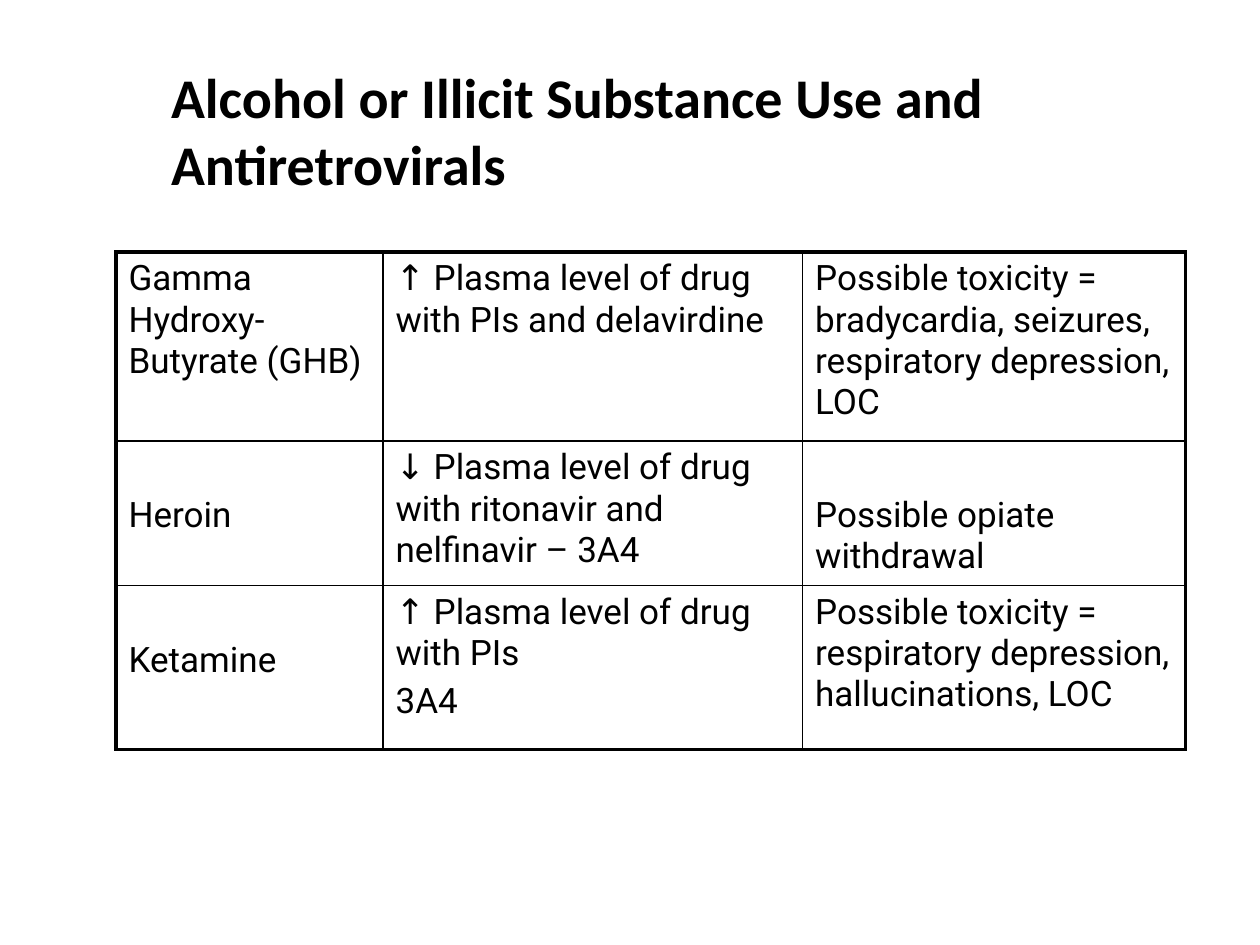
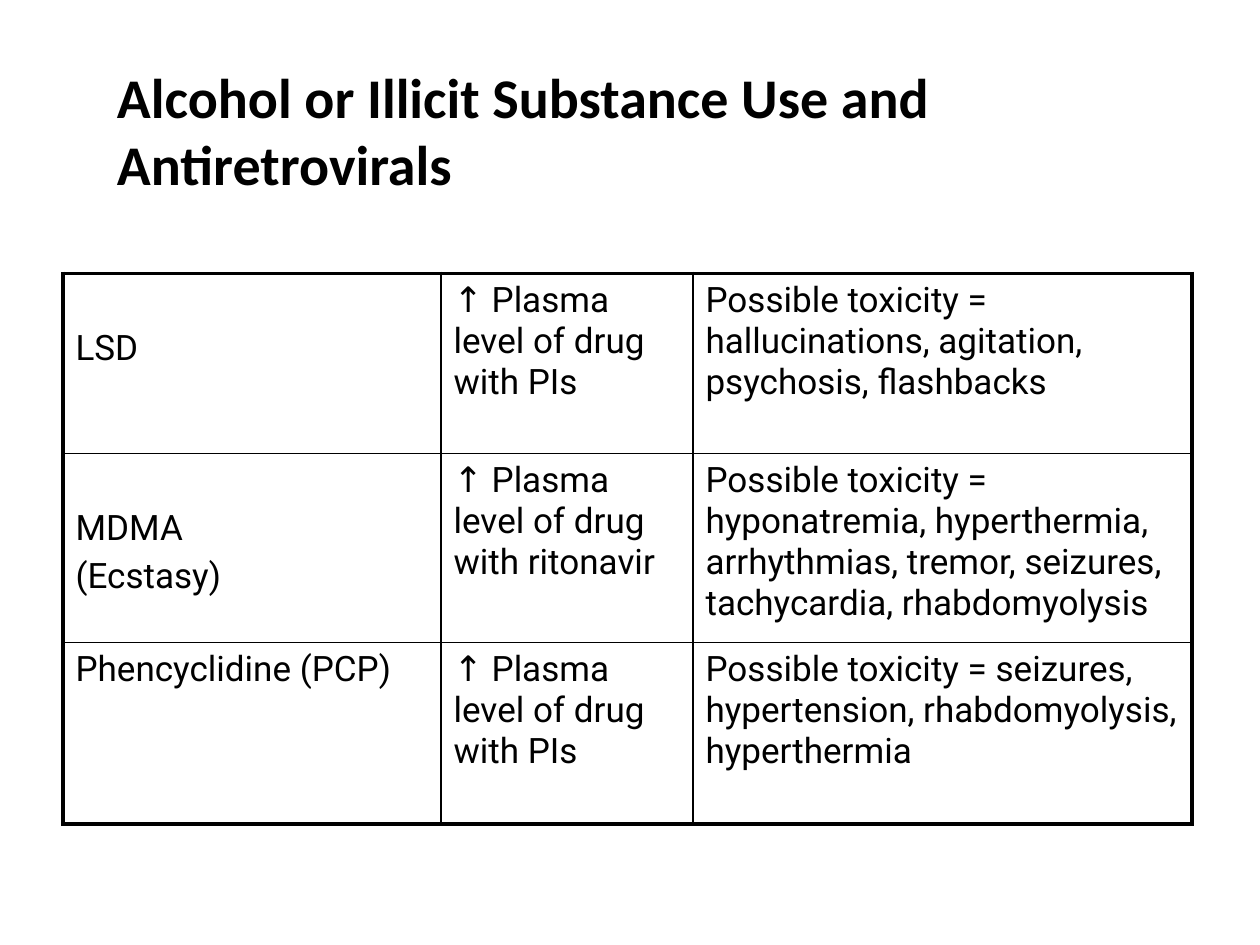
from dataclasses import dataclass

from lxml.etree import SubElement
from pptx import Presentation
from pptx.dml.color import RGBColor
from pptx.enum.text import MSO_ANCHOR as Anchor
from pptx.oxml.ns import qn
from pptx.util import Emu, Pt

PX = 9144  # EMU per px, 100 px to the inch


@dataclass(frozen=True)
class Theme:
    ink: str = "000000"
    title_font: str = "Calibri"
    title_size: int = 32
    body_font: str = "Roboto"
    body_size: int = 20
    para_gap: int = 4
    frame_line: float = 2.25
    inner_line: float = 1
    pad_x: int = 10
    pad_y: int = 5
    lowered_pad: int = 43  # top padding of cells that start one line lower


@dataclass(frozen=True)
class Box:
    x: int
    y: int
    w: int
    h: int


@dataclass(frozen=True)
class Entry:
    text: str
    lowered: bool = False


@dataclass(frozen=True)
class DrugSlide:
    title_box: Box
    left: int
    top: int
    col_widths: tuple[int, ...]
    row_heights: tuple[int, ...]
    rows: tuple[tuple[Entry, ...], ...]


THEME = Theme()
TITLE = "Alcohol or Illicit Substance Use and Antiretrovirals"

SLIDES = (
    DrugSlide(
        Box(126, 23, 807, 160), 92, 200, (212, 333, 304), (150, 113, 130),
        (
            (Entry("Gamma Hydroxy-Butyrate (GHB)"),
             Entry("↑ Plasma level of drug with PIs and delavirdine"),
             Entry("Possible toxicity = bradycardia, seizures, respiratory depression, LOC")),
            (Entry("Heroin", lowered=True),
             Entry("↓ Plasma level of drug with ritonavir and nelfinavir – 3A4"),
             Entry("Possible opiate withdrawal", lowered=True)),
            (Entry("Ketamine", lowered=True),
             Entry("↑ Plasma level of drug with PIs\n3A4"),
             Entry("Possible toxicity = respiratory depression, hallucinations, LOC")),
        ),
    ),
    DrugSlide(
        Box(83, 23, 858, 160), 50, 217, (300, 200, 396), (143, 150, 144),
        (
            (Entry("LSD", lowered=True),
             Entry("↑ Plasma level of drug with PIs"),
             Entry("Possible toxicity = hallucinations, agitation, psychosis, flashbacks")),
            (Entry("MDMA\n(Ecstasy)", lowered=True),
             Entry("↑ Plasma level of drug with ritonavir"),
             Entry("Possible toxicity = hyponatremia, hyperthermia, arrhythmias, "
                   "tremor, seizures, tachycardia, rhabdomyolysis")),
            (Entry("Phencyclidine (PCP)"),
             Entry("↑ Plasma level of drug with PIs"),
             Entry("Possible toxicity = seizures, hypertension, rhabdomyolysis, hyperthermia")),
        ),
    ),
)


def px(n: int) -> Emu:
    return Emu(n * PX)


def write(tf, text: str, *, font: str, size: int, bold: bool = False, gap: int = 0) -> None:
    """Fill a text frame, one paragraph per line of text."""
    tf.word_wrap = True
    for i, line in enumerate(text.split("\n")):
        p = tf.add_paragraph() if i else tf.paragraphs[0]
        if i:
            p.space_before = Pt(gap)
        r = p.add_run()
        r.text = line
        r.font.name, r.font.size, r.font.bold = font, Pt(size), bold
        r.font.color.rgb = RGBColor.from_string(THEME.ink)


def add_title(s, box: Box) -> None:
    sp = s.shapes.add_textbox(px(box.x), px(box.y), px(box.w), px(box.h))
    tf = sp.text_frame
    tf.vertical_anchor = Anchor.MIDDLE
    write(tf, TITLE, font=THEME.title_font, size=THEME.title_size, bold=True)


def add_border(cell, side: str, width: float) -> None:
    ln = SubElement(cell._tc.get_or_add_tcPr(), qn(f"a:ln{side}"), w=str(Pt(width)))
    fill = SubElement(ln, qn("a:solidFill"))
    SubElement(fill, qn("a:srgbClr"), val=THEME.ink)


def add_drug_table(s, spec: DrugSlide) -> None:
    n_rows, n_cols = len(spec.row_heights), len(spec.col_widths)
    frame = s.shapes.add_table(n_rows, n_cols, px(spec.left), px(spec.top),
                               px(sum(spec.col_widths)), px(sum(spec.row_heights)))
    table = frame.table
    table.first_row = table.horz_banding = False
    for col, width in zip(table.columns, spec.col_widths):
        col.width = px(width)
    for row, height in zip(table.rows, spec.row_heights):
        row.height = px(height)

    for i, entries in enumerate(spec.rows):
        for j, entry in enumerate(entries):
            cell = table.cell(i, j)
            cell.margin_left = cell.margin_right = px(THEME.pad_x)
            cell.margin_top = px(THEME.lowered_pad if entry.lowered else THEME.pad_y)
            cell.margin_bottom = px(THEME.pad_y)
            # Heavy lines only on the outer edge of the table
            on_edge = {"L": j == 0, "R": j == n_cols - 1, "T": i == 0, "B": i == n_rows - 1}
            for side, outer in on_edge.items():
                add_border(cell, side, THEME.frame_line if outer else THEME.inner_line)
            cell.fill.background()
            write(cell.text_frame, entry.text, font=THEME.body_font,
                  size=THEME.body_size, gap=THEME.para_gap)


def main() -> None:
    prs = Presentation()
    prs.slide_width, prs.slide_height = px(1000), px(750)
    for spec in SLIDES:
        s = prs.slides.add_slide(prs.slide_layouts[6])
        add_title(s, spec.title_box)
        add_drug_table(s, spec)
    prs.save("out.pptx")


if __name__ == "__main__":
    main()
